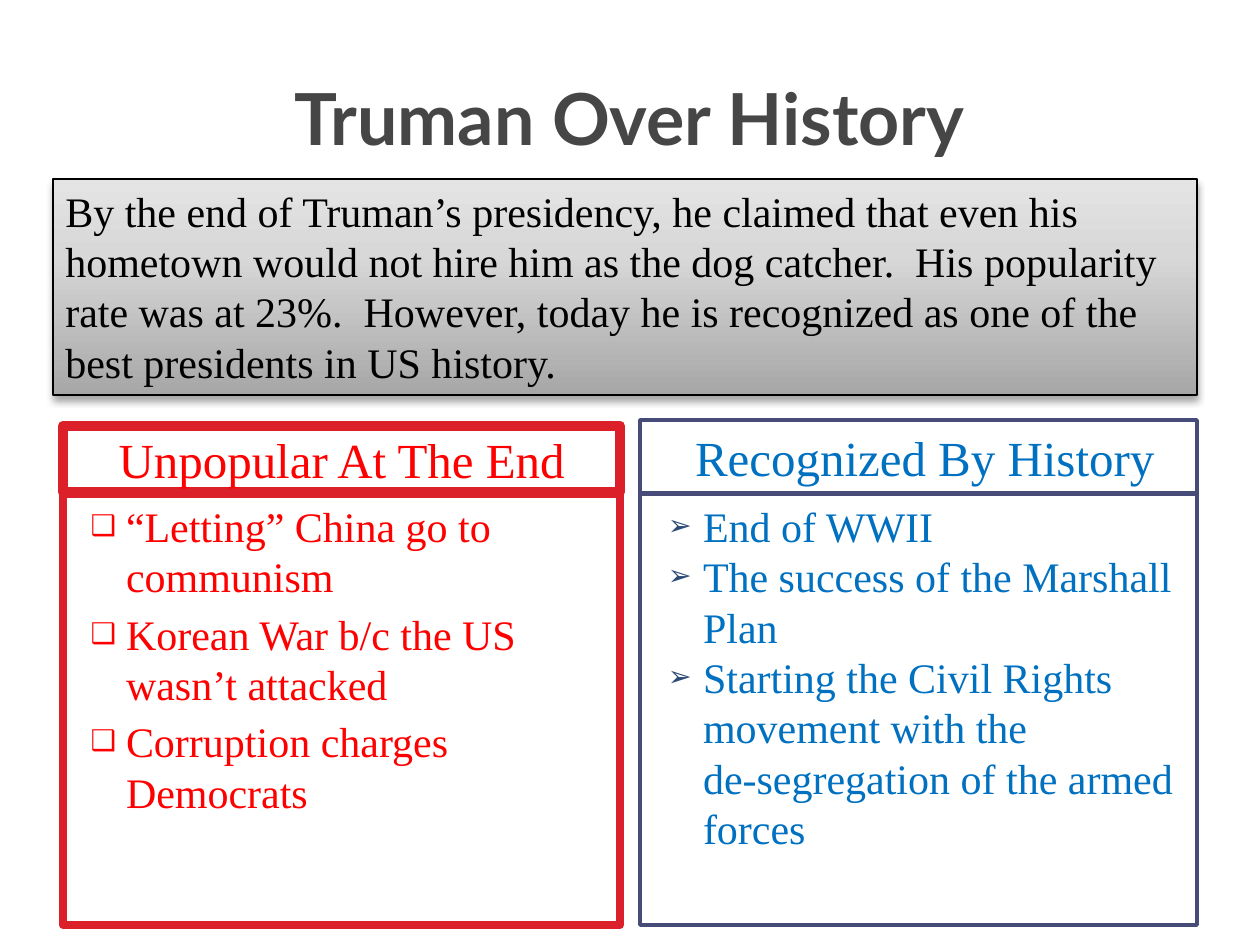
from lxml import etree
from pptx import Presentation
from pptx import util as u
from pptx.dml.color import RGBColor
from pptx.enum import shapes, text
from pptx.oxml.ns import qn

SCALE = 914400 / 126  # EMU in one px
SERIF = "Times New Roman"
RED, BLUE = "FF0000", "0070C0"

INTRO = ("By the end of Truman’s presidency, he claimed that even his hometown would "
         "not hire him as the dog catcher.  His popularity rate was at 23%.  However, "
         "today he is recognized as one of the best presidents in US history.")

COLUMNS = [
    {"left": 63, "top": 426, "head_height": 66, "ids": (1, 2),
     "head": "Unpopular At The End ", "colour": RED,
     "border": "DB202A", "widths": (6, 4.5),
     "bullet": "❑", "bullet_colour": RED, "gap": 4,
     "points": ["“Letting” China go to communism",
                "Korean War b/c the US wasn’t attacked",
                "Corruption charges Democrats"]},
    {"left": 640, "top": 420, "head_height": 73, "ids": (3, 4),
     "head": "Recognized By History", "colour": BLUE,
     "border": "474B78", "widths": (2.25, 2.25),
     "bullet": "➢", "bullet_colour": "2B4A76", "gap": 0,
     "points": ["End of WWII",
                "The success of the Marshall Plan",
                "Starting the Civil Rights movement with the\vde-segregation of the armed forces"]},
]


def px(value):
    return u.Emu(round(value * SCALE))


def rgb(value):
    return RGBColor.from_string(value)


def apply(target, values):
    for name, value in values.items():
        setattr(target, name, value)


def place(shape, left, top, width, height):
    apply(shape, {"left": px(left), "top": px(top),
                  "width": px(width), "height": px(height)})


def outline(shape, colour, width):
    shape.line.color.rgb = rgb(colour)
    shape.line.width = u.Pt(width)


def add_bullet(para, mark, colour):
    props = para._p.get_or_add_pPr()
    props.set("marL", str(u.Inches(0.4)))
    props.set("indent", str(u.Inches(-0.28)))
    tint = etree.SubElement(props, qn("a:buClr"))
    etree.SubElement(tint, qn("a:srgbClr"), val=colour)
    etree.SubElement(props, qn("a:buSzPct"), val="68000")
    etree.SubElement(props, qn("a:buChar"), char=mark)


def write(shape, lines, size, colour, font=SERIF, bold=False, align="LEFT",
          anchor="TOP", gap=0, bullet=None):
    box = shape.text_frame
    apply(box, {"word_wrap": True, "auto_size": text.MSO_AUTO_SIZE.NONE,
                "vertical_anchor": getattr(text.MSO_ANCHOR, anchor)})
    for index, line in enumerate(lines):
        para = box.add_paragraph() if index else box.paragraphs[0]
        para.text = line
        apply(para, {"alignment": getattr(text.PP_ALIGN, align),
                     "space_before": u.Pt(gap if index else 0)})
        if bullet:
            add_bullet(para, *bullet)
        for span in para.runs:
            apply(span.font, {"size": u.Pt(size), "name": font, "bold": bold})
            span.font.color.rgb = rgb(colour)


def add_gradient(shape, stops):
    shape.fill.gradient()
    shape.fill.gradient_angle = 90
    stop_list = shape._element.spPr.find(".//" + qn("a:gsLst"))
    for old in list(stop_list):
        stop_list.remove(old)
    for position, colour in stops:
        stop = etree.SubElement(stop_list, qn("a:gs"), pos=str(position * 1000))
        etree.SubElement(stop, qn("a:srgbClr"), val=colour)


def add_shadow(shape):
    shape.shadow.inherit = False
    effects = shape._element.spPr.find(qn("a:effectLst"))
    shadow = etree.SubElement(effects, qn("a:outerShdw"), blurRad=str(u.Pt(4)),
                              dist=str(u.Pt(3)), dir="5400000", rotWithShape="0")
    tint = etree.SubElement(shadow, qn("a:srgbClr"), val="000000")
    etree.SubElement(tint, qn("a:alpha"), val="35000")


def fill_column(holders, column):
    head, body = (holders[number] for number in column["ids"])
    place(head, column["left"], column["top"], 557, column["head_height"])
    place(body, column["left"], 494, 557, 431)
    for shape, width in zip((head, body), column["widths"]):
        shape.fill.solid()
        shape.fill.fore_color.rgb = rgb("FFFFFF")
        outline(shape, column["border"], width)
    head.text_frame.margin_left = u.Inches(0.2)
    write(head, [column["head"]], 28, column["colour"], align="CENTER", anchor="MIDDLE")
    write(body, column["points"], 24, column["colour"], gap=column["gap"],
          bullet=(column["bullet"], column["bullet_colour"]))


def add_intro(page):
    panel = page.shapes.add_shape(shapes.MSO_SHAPE.RECTANGLE, 0, 0, 0, 0)
    place(panel, 53, 179, 1144, 216)
    add_gradient(panel, [(0, "A7A7A7"), (65, "D8D8D8"), (100, "E4E4E4")])
    outline(panel, "000000", 0.75)
    add_shadow(panel)
    write(panel, [INTRO], 24, "000000")


def main():
    deck = Presentation()
    deck.slide_width, deck.slide_height = px(1260), px(945)
    page = deck.slides.add_slide(deck.slide_layouts.get_by_name("Comparison"))
    holders = {holder.placeholder_format.idx: holder for holder in page.placeholders}

    # Title
    place(holders[0], 63, 38, 1134, 157)
    write(holders[0], ["Truman Over History"], 41, "464646", font="Lato",
          bold=True, align="CENTER", anchor="MIDDLE")

    # Two opposing views
    for column in COLUMNS:
        fill_column(holders, column)

    # Introduction
    add_intro(page)
    deck.save("out.pptx")


if __name__ == "__main__":
    main()
